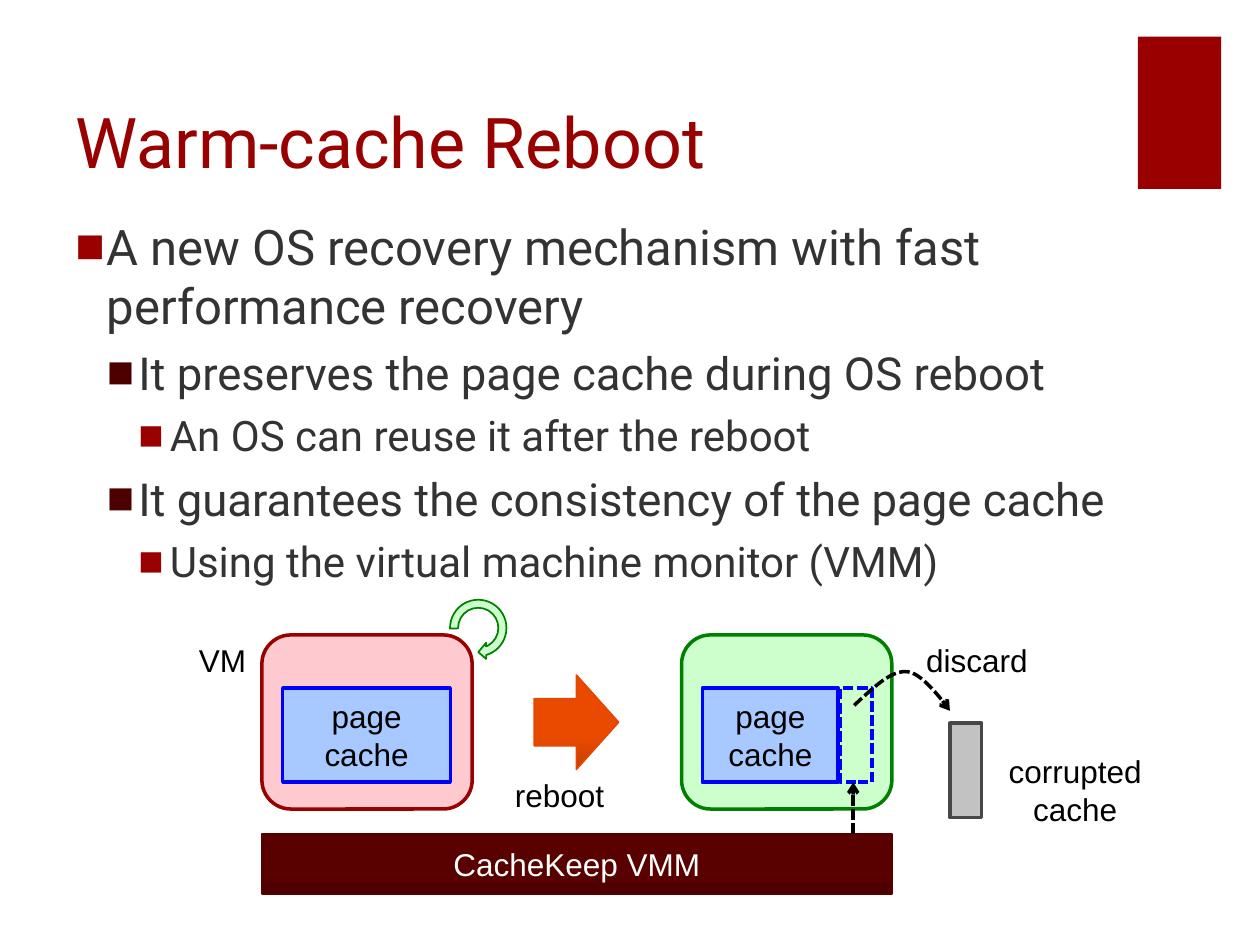
from lxml import etree
from pptx import Presentation
from pptx.dml.color import RGBColor
from pptx.enum.dml import MSO_LINE
from pptx.enum.shapes import MSO_CONNECTOR, MSO_SHAPE
from pptx.enum.text import MSO_ANCHOR, PP_ALIGN
from pptx.oxml.ns import qn
from pptx.util import Cm, Pt

RECT = MSO_SHAPE.RECTANGLE
ROUND = MSO_SHAPE.ROUNDED_RECTANGLE
ARROW = MSO_SHAPE.RIGHT_ARROW
LOOP = MSO_SHAPE.CIRCULAR_ARROW
STRAIGHT = MSO_CONNECTOR.STRAIGHT
DASH = MSO_LINE.SQUARE_DOT
MIDDLE, BOTTOM = MSO_ANCHOR.MIDDLE, MSO_ANCHOR.BOTTOM
LEFT, CENTER = PP_ALIGN.LEFT, PP_ALIGN.CENTER

COLORS = {
    "red": "990000", "maroon": "4D0000", "text": "333333",
    "black": "000000", "white": "FFFFFF",
    "pink": "FFC9D0", "mint": "CCFFCC", "green": "008000",
    "sky": "A7C9FF", "blue": "0000FF", "gray": "C2C2C2", "slate": "474747",
    "wine": "590000", "wine dark": "4C0000", "wine edge": "570000",
    "orange": "E94A00", "orange dark": "C83F00", "orange edge": "E44800",
}

LEVELS = [(28, 18, "red"), (26, 6, "maroon"), (24, 6, "red")]
POINTS = [
    (0, "A new OS recovery mechanism with fast performance recovery"),
    (1, "It preserves the page cache during OS reboot"),
    (2, "An OS can reuse it after the reboot"),
    (1, "It guarantees the consistency of the page cache"),
    (2, "Using the virtual machine monitor (VMM)"),
]


def color(name):
    return RGBColor.from_string(COLORS[name])


def bezier(a, b, c, d, steps=12):
    curve = []
    for i in range(1, steps + 1):
        t = i / steps
        u = 1 - t
        curve.append(tuple(
            u**3 * p + 3 * u * u * t * q + 3 * u * t * t * r + t**3 * s
            for p, q, r, s in zip(a, b, c, d)))
    return curve


class Deck:
    head = "Roboto"
    font = "Arial"
    size = 18

    def __init__(self):
        self.prs = Presentation()
        self.prs.slide_width, self.prs.slide_height = Cm(25.4), Cm(19.05)
        self.slide = self.prs.slides.add_slide(self.prs.slide_layouts[5])
        self.shapes = self.slide.shapes

    def style(self, para, size, ink, font, align):
        para.alignment = align
        for run in para.runs:
            run.font.size = Pt(size)
            run.font.name = font
            run.font.color.rgb = color(ink)

    def letter(self, shape, text, ink="black", align=CENTER):
        frame = shape.text_frame
        frame.text = text
        for para in frame.paragraphs:
            self.style(para, self.size, ink, self.font, align)

    def title(self, text, *box):
        shape = self.shapes.title
        shape.left, shape.top, shape.width, shape.height = map(Cm, box)
        shape.text_frame.text = text
        shape.text_frame.vertical_anchor = BOTTOM
        self.style(shape.text_frame.paragraphs[0], 40, "red", self.head, LEFT)

    def bullets(self, points, *box):
        frame = self.shapes.add_textbox(*map(Cm, box)).text_frame
        frame.word_wrap = True
        frame.text = "\n".join(text for _, text in points)
        for para, (level, _) in zip(frame.paragraphs, points):
            size, gap, mark = LEVELS[level]
            para.level = level
            para.space_before = Pt(gap)
            self.style(para, size, "text", self.head, LEFT)
            props = para._p.get_or_add_pPr()
            props.set("marL", str(Cm(0.635 * (level + 1))))
            props.set("indent", str(-Cm(0.635)))
            tint = etree.SubElement(props, qn("a:buClr"))
            etree.SubElement(tint, qn("a:srgbClr"), val=COLORS[mark])
            etree.SubElement(props, qn("a:buFont"), typeface=self.font)
            etree.SubElement(props, qn("a:buChar"), char="■")

    def label(self, text, *box, align=LEFT):
        shape = self.shapes.add_textbox(*map(Cm, box))
        shape.text_frame.word_wrap = False
        self.letter(shape, text, align=align)

    def shape(self, kind, *box, fill=None, edge=None, width=2, dark=None,
              text="", ink="black"):
        shape = self.shapes.add_shape(kind, *map(Cm, box))
        shape.shadow.inherit = False
        if dark:
            shape.fill.gradient()
            shape.fill.gradient_angle = 90
            stops = zip(shape.fill.gradient_stops, (dark, fill), (0, 0.35))
            for stop, name, place in stops:
                stop.color.rgb = color(name)
                stop.position = place
        elif fill:
            shape.fill.solid()
            shape.fill.fore_color.rgb = color(fill)
        else:
            shape.fill.background()
        if edge:
            shape.line.color.rgb = color(edge)
            shape.line.width = Pt(width)
        else:
            shape.line.fill.background()
        if text:
            shape.text_frame.vertical_anchor = MIDDLE
            self.letter(shape, text, ink)
        return shape

    def dash(self, shape, edge="black", tip=True):
        line = shape.line
        line.color.rgb = color(edge)
        line.width = Pt(2)
        line.dash_style = DASH
        if tip:
            props = shape._element.spPr.find(qn("a:ln"))
            etree.SubElement(props, qn("a:tailEnd"), type="arrow")

    def arrow(self, x1, y1, x2, y2):
        line = self.shapes.add_connector(STRAIGHT, *map(Cm, (x1, y1, x2, y2)))
        self.dash(line)
        etree.SubElement(line._element.spPr, qn("a:effectLst"))

    def curve(self, start, *parts):
        trace = self.shapes.build_freeform(*map(Cm, start))
        for part in parts:
            spots = bezier(start, *part)
            trace.add_line_segments(
                [(Cm(x), Cm(y)) for x, y in spots], close=False)
            start = part[-1]
        shape = trace.convert_to_shape()
        shape.shadow.inherit = False
        shape.fill.background()
        self.dash(shape)

    def machine(self, x, fill, edge, width):
        self.shape(ROUND, x, 12.8, 4.24, 3.51, fill=fill, edge=edge)
        self.shape(RECT, x + 0.42, 13.87, width, 1.9, fill="sky", edge="blue",
                   text="page\ncache")


def main():
    deck = Deck()
    deck.shape(RECT, 22.94, 0.74, 1.68, 3.07, fill="red")
    deck.title("Warm-cache Reboot", 1.27, 0.64, 21.39, 3.17)
    deck.bullets(POINTS, 1.27, 4.24, 22.66, 13.41)

    deck.shape(RECT, 5.28, 16.81, 12.7, 1.22, fill="wine", dark="wine dark",
               edge="wine edge", width=1, text="CacheKeep VMM", ink="white")
    deck.label("VM", 3.76, 12.8, 1.47, 1.02)
    deck.machine(5.28, "pink", "red", 3.38)

    deck.shape(ARROW, 10.77, 13.61, 1.7, 1.9, fill="orange",
               dark="orange dark", edge="orange edge", width=1)
    deck.label("reboot", 10.13, 15.52, 2.54, 1.02)
    loop = deck.shape(LOOP, 8.99, 12.01, 1.3, 1.3, fill="mint", edge="green",
                      width=1)
    loop.rotation = 90
    for i, value in enumerate((0.125, 11.42, 204.58, 53.21, 0.125)):
        loop.adjustments[i] = value

    deck.machine(13.74, "mint", "green", 2.74)
    deck.shape(RECT, 19.15, 14.58, 0.64, 1.9, fill="gray", edge="slate")
    deck.label("discard", 18.42, 12.8, 2.74, 1.02)
    deck.label("corrupted\ncache", 19.91, 15.04, 3.53, 1.8, align=CENTER)
    deck.dash(deck.shape(RECT, 16.94, 13.87, 0.64, 1.9), "blue", tip=False)
    deck.arrow(17.2, 16.81, 17.2, 15.77)
    deck.curve((17.22, 14.22),
               ((17.6, 13.87), (17.96, 13.51), (18.29, 13.54)),
               ((18.62, 13.56), (19.15, 14.33), (19.15, 14.33)))
    deck.prs.save("out.pptx")


if __name__ == "__main__":
    main()
